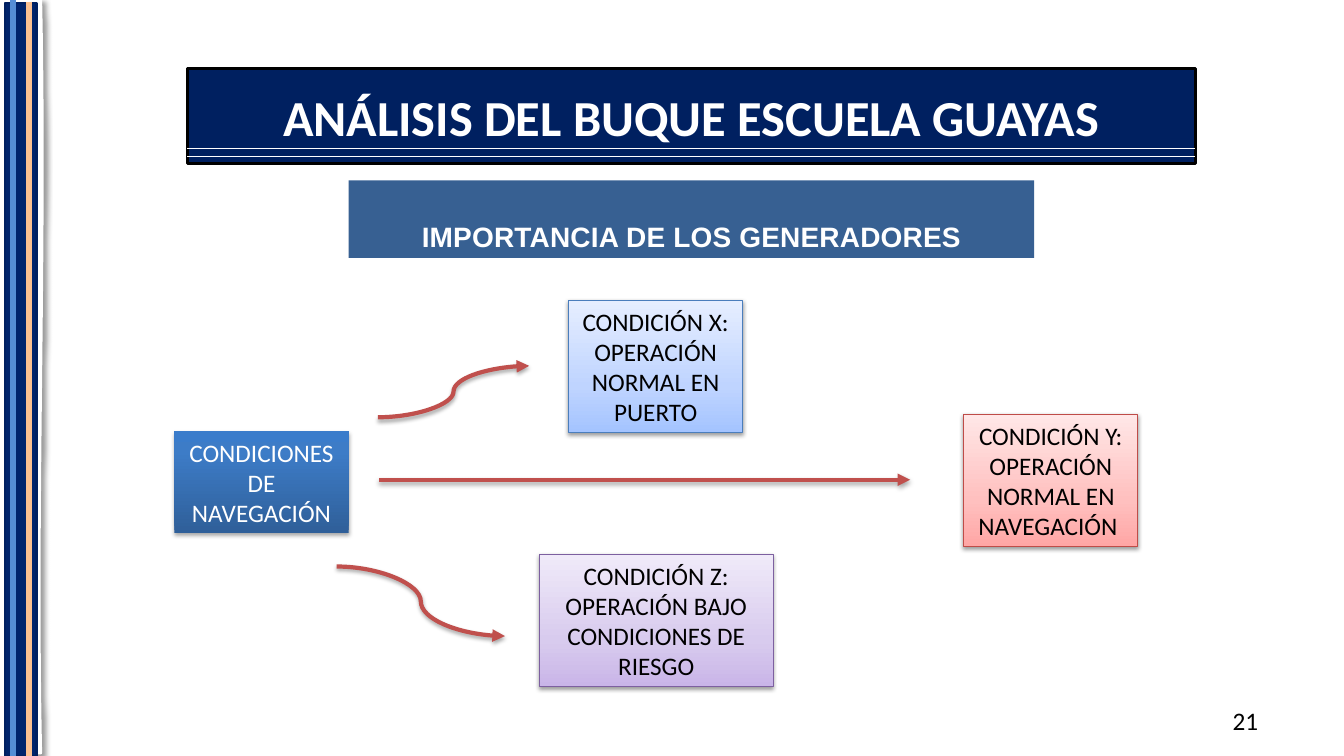
from lxml import etree
from pptx import Presentation
from pptx import util as u
from pptx.dml.color import RGBColor
from pptx.enum import shapes, text
from pptx.oxml import ns

COLS, ROWS = 160, 90

WHITE = RGBColor(0xFF, 0xFF, 0xFF)
BLACK = RGBColor(0x00, 0x00, 0x00)
NAVY = RGBColor(0x00, 0x20, 0x60)
SIDE_NAVY = RGBColor(0x00, 0x24, 0x6C)
SKY = RGBColor(0x55, 0x8E, 0xD5)
PEACH = RGBColor(0xFA, 0xC0, 0x90)
STEEL = RGBColor(0x37, 0x60, 0x92)
ARROW_RED = RGBColor(0xC0, 0x50, 0x4D)
BLUE_EDGE = RGBColor(0x4B, 0x7E, 0xBC)
RED_EDGE = RGBColor(0xBF, 0x4C, 0x48)
PURPLE_EDGE = RGBColor(0x7D, 0x60, 0xA0)

# Gradients run from bottom to top: (position in percent, colour)
DEEP_BLUE = ((0, RGBColor(0x2F, 0x5F, 0x99)), (80, RGBColor(0x3D, 0x7C, 0xC7)),
             (100, RGBColor(0x3A, 0x7C, 0xCB)))
PALE_BLUE = ((0, RGBColor(0xA4, 0xC4, 0xFF)), (35, RGBColor(0xBF, 0xD4, 0xFF)),
             (100, RGBColor(0xE6, 0xEE, 0xFF)))
PALE_RED = ((0, RGBColor(0xFF, 0xA6, 0xA5)), (35, RGBColor(0xFF, 0xC0, 0xBF)),
            (100, RGBColor(0xFF, 0xE7, 0xE7)))
PALE_PURPLE = ((0, RGBColor(0xC9, 0xB5, 0xE8)), (35, RGBColor(0xD8, 0xCB, 0xEE)),
               (100, RGBColor(0xF0, 0xEA, 0xF9)))

# Shadows: opacity in percent, blur and distance in points, angle in degrees
SIDE_SHADOW = (40, 4, 3, 45)
STRONG_SHADOW = (35, 3.1, 1.8, 90)
SOFT_SHADOW = (38, 3.1, 1.6, 90)


def add(parent, tag, **attrs):
    values = {name: str(value) for name, value in attrs.items()}
    return etree.SubElement(parent, ns.qn(tag), values)


def cast_shadow(effects, opacity, blur, dist, angle):
    shadow = add(effects, "a:outerShdw", blurRad=u.Pt(blur), dist=u.Pt(dist),
                 dir=angle * 60000, rotWithShape=0)
    add(add(shadow, "a:srgbClr", val=BLACK), "a:alpha", val=opacity * 1000)


def write(tf, content, size=18, color=BLACK, font="Calibri", bold=False,
          align=text.PP_ALIGN.CENTER, spacing=None, tracking=None):
    """Fill a text frame, one paragraph for each line of content."""
    tf.word_wrap = True
    for i, line in enumerate(content.split("\n")):
        p = tf.paragraphs[0] if i == 0 else tf.add_paragraph()
        p.alignment = align
        if spacing:
            p.line_spacing = spacing
        r = p.add_run()
        r.text = line
        r.font.size = u.Pt(size)
        r.font.name = font
        r.font.bold = bold
        r.font.color.rgb = color
        if tracking:
            r.font._element.set("spc", str(tracking))


class Board:
    """Draws on one slide; lengths are columns and rows of the grid."""

    def __init__(self, prs):
        self.slide = prs.slides.add_slide(prs.slide_layouts[6])
        self.col = prs.slide_width / COLS
        self.row = prs.slide_height / ROWS

    def place(self, x, y):
        return int(x * self.col), int(y * self.row)

    def box(self, x, y, w, h, fill, edge=None, weight=0.75, shadow=None,
            kind=shapes.MSO_SHAPE.RECTANGLE):
        sp = self.slide.shapes.add_shape(kind, *self.place(x, y), *self.place(w, h))
        if isinstance(fill, RGBColor):
            sp.fill.solid()
            sp.fill.fore_color.rgb = fill
        else:
            self.shade(sp, fill)
        if edge is None:
            sp.line.fill.background()
        else:
            sp.line.color.rgb = edge
            sp.line.width = u.Pt(weight)
        sp.shadow.inherit = False
        if shadow:
            cast_shadow(sp._element.spPr.find(ns.qn("a:effectLst")), *shadow)
        return sp

    def shade(self, sp, stops):
        sp.fill.gradient()
        sp.fill.gradient_angle = 90
        gs_list = sp._element.spPr.find(".//" + ns.qn("a:gsLst"))
        for gs in list(gs_list):
            gs_list.remove(gs)
        for pos, color in stops:
            add(add(gs_list, "a:gs", pos=pos * 1000), "a:srgbClr", val=color)

    def node(self, x, y, w, h, content, fill, edge=None, color=BLACK,
             shadow=SOFT_SHADOW):
        sp = self.box(x, y, w, h, fill, edge, shadow=shadow)
        sp.text_frame.vertical_anchor = text.MSO_ANCHOR.MIDDLE
        write(sp.text_frame, content, color=color)

    def label(self, x, y, w, h, content, **style):
        sp = self.slide.shapes.add_textbox(*self.place(x, y), *self.place(w, h))
        write(sp.text_frame, content, **style)

    def line(self, start, end, color, weight, kind=shapes.MSO_CONNECTOR.STRAIGHT):
        cn = self.slide.shapes.add_connector(kind, *self.place(*start), *self.place(*end))
        cn.line.color.rgb = color
        cn.line.width = u.Pt(weight)
        return cn, add(cn._element.spPr, "a:effectLst")

    def arrow(self, start, end):
        cn, effects = self.line(start, end, ARROW_RED, 3, shapes.MSO_CONNECTOR.CURVE)
        add(cn.line._get_or_add_ln(), "a:tailEnd", type="triangle")
        cast_shadow(effects, *STRONG_SHADOW)


def main():
    prs = Presentation()
    prs.slide_width, prs.slide_height = u.Inches(13.333), u.Inches(7.5)
    board = Board(prs)

    # Side band
    wave = board.box(-40.56, 44.04, 89.64, 1.56, WHITE, WHITE, 2, SIDE_SHADOW,
                     shapes.MSO_SHAPE.WAVE)
    wave.rotation = 90
    board.box(0.6, 0.36, 3.72, 89.64, SIDE_NAVY, NAVY, 2)

    # Title
    left, width = 22.32, 120
    board.box(left, 8.16, width, 11.28, NAVY, BLACK, 2)
    board.label(31.32, 9.6, 102, 8.52, "ANÁLISIS DEL BUQUE ESCUELA GUAYAS",
                size=36, color=WHITE, bold=True)
    for y in (18.6, 17.64):
        board.line((left, y), (left + width, y), WHITE, 0.75)
    for x, top, color in ((1.56, 0, SKY), (3.48, 0.24, PEACH)):
        board.line((x, top), (x, top + ROWS), color, 4.5)
    board.label(145.56, 83.4, 9.6, 4.8, "21", align=text.PP_ALIGN.LEFT)

    subtitle = board.box(41.52, 21.48, 81.6, 9.24, STEEL)
    write(subtitle.text_frame, "IMPORTANCIA DE LOS GENERADORES", size=20,
          color=WHITE, font="Arial", bold=True, spacing=2.0, tracking=10)

    # Sailing conditions
    node_w, node_h = 20.76, 15.72
    board.node(20.76, 51.36, node_w, 12.12, "CONDICIONES DE NAVEGACIÓN",
               DEEP_BLUE, color=WHITE, shadow=STRONG_SHADOW)
    board.node(114.72, 49.32, node_w, node_h,
               "CONDICIÓN Y: OPERACIÓN NORMAL EN NAVEGACIÓN ", PALE_RED, RED_EDGE)
    board.node(64.2, 66, 27.84, node_h,
               "CONDICIÓN Z:\nOPERACIÓN BAJO CONDICIONES DE RIESGO",
               PALE_PURPLE, PURPLE_EDGE)
    board.node(67.68, 35.76, node_w, node_h,
               "CONDICIÓN X:\nOPERACIÓN NORMAL EN PUERTO", PALE_BLUE, BLUE_EDGE)

    for start, end in (((45, 49.68), (63, 43.56)),
                       ((40.08, 67.44), (60.12, 75.72)),
                       ((45.12, 57.12), (108.36, 57.12))):
        board.arrow(start, end)

    prs.save("out.pptx")


if __name__ == "__main__":
    main()
